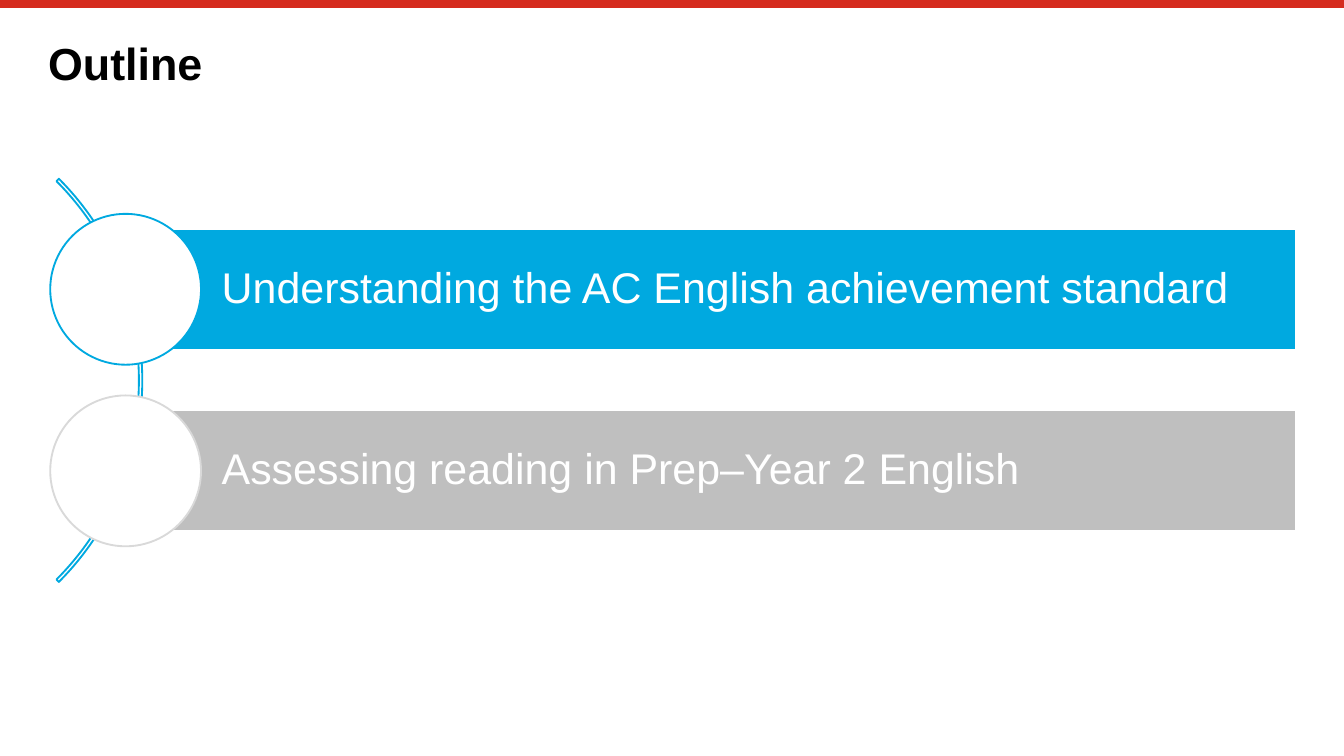
from pptx import Presentation
from pptx.dml.color import RGBColor
from pptx.enum import shapes, text
from pptx.oxml import parse_xml
from pptx.oxml.ns import nsdecls
from pptx.util import Cm, Pt

RED = RGBColor(0xD5, 0x2B, 0x1E)
BLUE = RGBColor(0x00, 0xA9, 0xE0)
GREY = RGBColor(0xBF, 0xBF, 0xBF)
PALE = RGBColor(0xD9, 0xD9, 0xD9)
WHITE = RGBColor(0xFF, 0xFF, 0xFF)
BLACK = RGBColor(0x00, 0x00, 0x00)
KIND = shapes.MSO_SHAPE


def draw(kind, box, fill, edge):
    form = slide.shapes.add_shape(kind, *map(Cm, box))
    form.shadow.inherit = False
    if fill is None:
        form.fill.background()
    else:
        form.fill.solid()
        form.fill.fore_color.rgb = fill
    form.line.color.rgb = edge
    form.line.width = Pt(1)
    return form


def write(form, words, size, color, bold, pads):
    frame = form.text_frame
    look = {"word_wrap": True, "vertical_anchor": text.MSO_ANCHOR.MIDDLE}
    sides = ("left", "top", "right", "bottom")
    look.update({f"margin_{side}": Cm(pad) for side, pad in zip(sides, pads)})
    for name, value in look.items():
        setattr(frame, name, value)
    para = frame.paragraphs[0]
    para.alignment = text.PP_ALIGN.LEFT
    para.line_spacing = 0.9
    run = para.add_run()
    run.text = words
    for name, value in {"name": "Arial", "size": Pt(size), "bold": bold}.items():
        setattr(run.font, name, value)
    run.font.color.rgb = color


deck = Presentation()
deck.slide_width, deck.slide_height = Cm(25.4), Cm(14.28)
slide = deck.slides.add_slide(deck.slide_layouts[6])

rule = slide.shapes.add_connector(
    shapes.MSO_CONNECTOR.STRAIGHT, Cm(0), Cm(0.08), Cm(25.4), Cm(0.08))
rule.line.color.rgb = RED
rule.line.width = Pt(4.2)
rule._element.spPr.append(parse_xml(f"<a:effectLst {nsdecls('a')}/>"))

title = slide.shapes.add_textbox(Cm(0.91), Cm(0.76), Cm(23.6), Cm(0.99))
write(title, "Outline", 24, BLACK, True, (0, 0, 0, 0))

arc = draw(KIND.BLOCK_ARC, (-8.08, 1.8, 10.77, 10.77), None, BLUE)
for place, value in enumerate((189, 27, 0.006)):
    arc.adjustments[place] = value

items = (
    ("Understanding the AC English achievement standard", BLUE, BLUE),
    ("Assessing reading in Prep–Year 2 English", GREY, PALE),
)
for row, (words, fill, edge) in enumerate(items):
    top = 4.32 + row * 3.43
    bar = draw(KIND.RECTANGLE, (2.39, top, 22.1, 2.29), fill, WHITE)
    write(bar, words, 23, WHITE, False, (1.8, 0.15, 0.15, 0.15))
    draw(KIND.OVAL, (0.95, top - 0.28, 2.85, 2.85), WHITE, edge)

deck.save("out.pptx")
